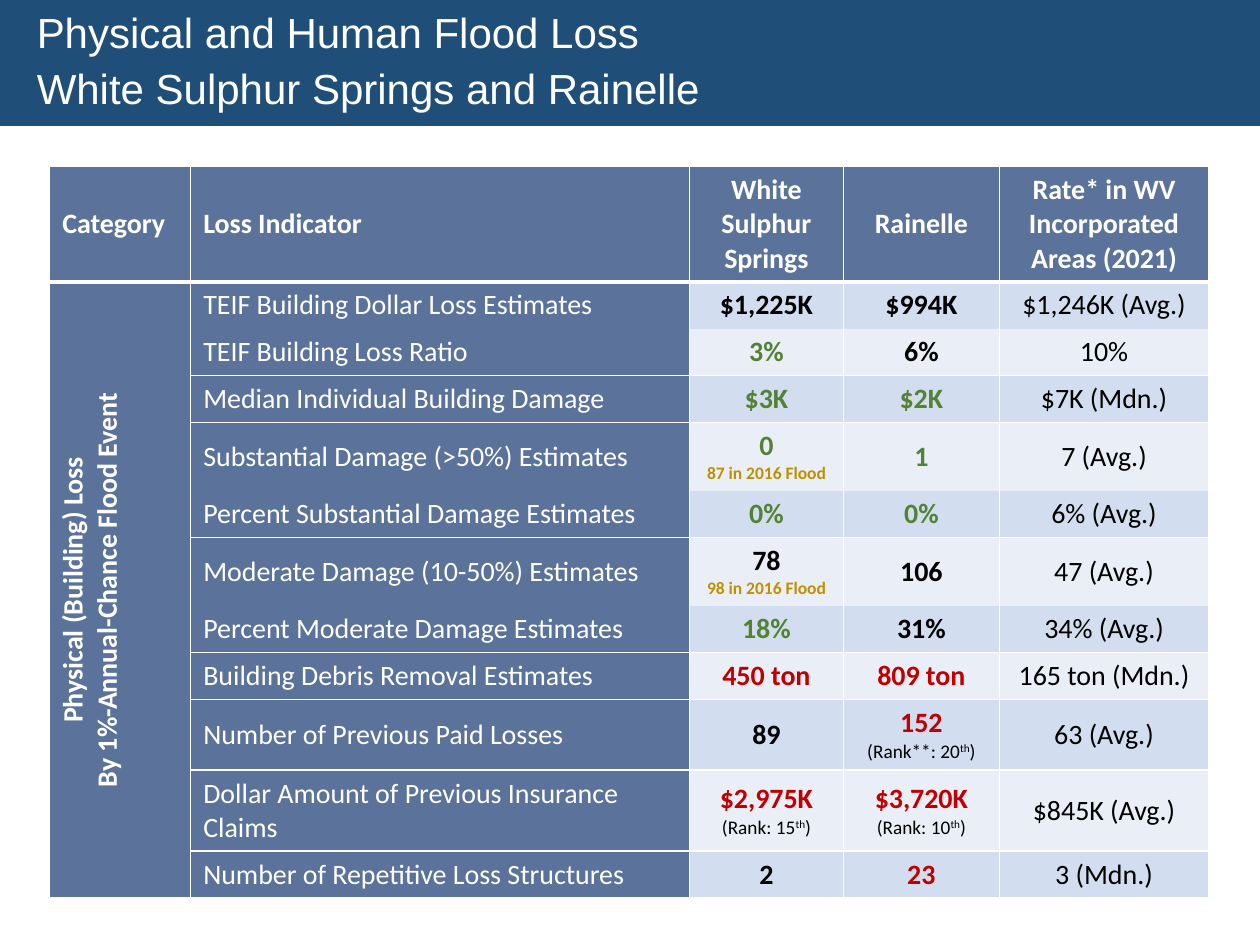
"""Build the flood loss comparison slide for White Sulphur Springs and Rainelle."""
from lxml.etree import SubElement
from pptx import Presentation
from pptx.dml.color import RGBColor
from pptx.enum.text import MSO_ANCHOR as Anchor, MSO_AUTO_SIZE as AutoSize, PP_ALIGN as Align
from pptx.oxml.ns import qn
from pptx.util import Pt

WHITE = RGBColor(0xFF, 0xFF, 0xFF)
BLACK = RGBColor(0x00, 0x00, 0x00)
NAVY = RGBColor(0x1F, 0x4E, 0x79)
SLATE = RGBColor(0x5B, 0x73, 0x9B)
BANDS = RGBColor(0xEA, 0xEF, 0xF7), RGBColor(0xD2, 0xDE, 0xEF)
GREEN = RGBColor(0x54, 0x82, 0x35)
GOLD = RGBColor(0xBF, 0x90, 0x00)
RED = RGBColor(0xC0, 0x00, 0x00)

HEADINGS = ["Category", "Loss Indicator", "White Sulphur Springs", "Rainelle",
            "Rate* in WV Incorporated Areas (2021)"]
CATEGORY = ["Physical (Building) Loss", "By 1%-Annual-Chance Flood Event"]
LOSSES = [
    ("TEIF Building Dollar Loss Estimates", ("$1,225K", BLACK), ("$994K", BLACK), "$1,246K (Avg.)"),
    ("TEIF Building Loss Ratio", ("3%", GREEN), ("6%", BLACK), "10%"),
    ("Median Individual Building Damage", ("$3K", GREEN), ("$2K", GREEN), "$7K (Mdn.)"),
    ("Substantial Damage (>50%) Estimates", ("0", GREEN, "87 in 2016 Flood"), ("1", GREEN), "7 (Avg.)"),
    ("Percent Substantial Damage Estimates", ("0%", GREEN), ("0%", GREEN), "6% (Avg.)"),
    ("Moderate Damage (10-50%) Estimates", ("78", BLACK, "98 in 2016 Flood"), ("106", BLACK), "47 (Avg.)"),
    ("Percent Moderate Damage Estimates", ("18%", GREEN), ("31%", BLACK), "34% (Avg.)"),
    ("Building Debris Removal Estimates", ("450 ton", RED), ("809 ton", RED), "165 ton (Mdn.)"),
    ("Number of Previous Paid Losses", ("89", BLACK), ("152", RED, "(Rank**: 20", "th", ")"), "63 (Avg.)"),
    ("Dollar Amount of Previous Insurance Claims", ("$2,975K", RED, "(Rank: 15", "th", ")"),
     ("$3,720K", RED, "(Rank: 10", "th", ")"), "$845K (Avg.)"),
    ("Number of Repetitive Loss Structures", ("2", BLACK), ("23", RED), "3 (Mdn.)"),
]
COLUMN_WIDTHS = [80.6, 285.1, 87.8, 89.3, 119.5]
LINE_HEIGHTS = {"single": 26.7, "flood": 38.9, "rank": 40.2, "double": 46.2}
ROW_KINDS = {4: "flood", 6: "flood", 9: "rank", 10: "double"}
HEADER_HEIGHT = 65.8
PAIR_STARTS = {1, 4, 6}


class SlideBuilder:
    """Hold the style and the current slide, and draw each kind of element."""

    heading = {"name": "Calibri", "size": Pt(16), "bold": True}
    regular = {**heading, "bold": False}
    flood = {**heading, "size": Pt(10)}
    rank = {**regular, "size": Pt(11)}
    banner = {"name": "Arial", "size": Pt(24), "bold": False}

    def __init__(self, deck):
        self.page = deck.slides.add_slide(deck.slide_layouts[5])

    def span(self, para, text, style, color, raised=False):
        span = para.add_run()
        span.text = text
        for name, value in style.items():
            setattr(span.font, name, value)
        span.font.color.rgb = color
        if raised:
            span._r.get_or_add_rPr().set("baseline", "30000")

    def lines(self, frame, texts, style, color, align):
        for index, text in enumerate(texts):
            para = frame.add_paragraph() if index else frame.paragraphs[0]
            para.alignment = align
            self.span(para, text, style, color)

    def title(self, texts, left, top, width, height):
        box = self.page.shapes.title
        place = {"left": left, "top": top, "width": width, "height": height}
        for name, value in place.items():
            setattr(box, name, Pt(value))
        box.fill.solid()
        box.fill.fore_color.rgb = NAVY
        frame = box.text_frame
        layout = {"auto_size": AutoSize.NONE, "word_wrap": True,
                  "vertical_anchor": Anchor.MIDDLE, "margin_left": Pt(21)}
        for name, value in layout.items():
            setattr(frame, name, value)
        self.lines(frame, texts, self.banner, WHITE, Align.LEFT)
        for para in frame.paragraphs:
            para.line_spacing = 0.9
        frame.paragraphs[1].space_before = Pt(6)

    def table(self, left, top, widths, heights):
        frame = self.page.shapes.add_table(len(heights), len(widths), Pt(left), Pt(top),
                                           Pt(sum(widths)), Pt(sum(heights)))
        table = frame.table
        for column, width in zip(table.columns, widths):
            column.width = Pt(width)
        for row, height in zip(table.rows, heights):
            row.height = Pt(height)
        return table

    def cell(self, cell, fill, top=1, bottom=1):
        cell.vertical_anchor = Anchor.MIDDLE
        properties = cell._tc.get_or_add_tcPr()
        for side, weight in zip("LRTB", (1, 1, top, bottom)):
            line = SubElement(properties, qn(f"a:ln{side}"), w=str(Pt(weight)))
            if weight:
                color = SubElement(SubElement(line, qn("a:solidFill")), qn("a:srgbClr"))
                color.set("val", str(WHITE))
            else:
                SubElement(line, qn("a:noFill"))
        cell.fill.solid()
        cell.fill.fore_color.rgb = fill

    def value(self, cell, text, color, *note):
        frame = cell.text_frame
        self.lines(frame, [text], self.heading, color, Align.CENTER)
        if note:
            para = frame.add_paragraph()
            para.alignment = Align.CENTER
            style, shade = (self.rank, BLACK) if len(note) > 1 else (self.flood, GOLD)
            for part in note:
                self.span(para, part, style, shade, raised=part == "th")


def fill_header(builder, table):
    for column, text in enumerate(HEADINGS):
        cell = table.cell(0, column)
        builder.cell(cell, SLATE, bottom=3)
        align = Align.LEFT if column < 2 else Align.CENTER
        builder.lines(cell.text_frame, [text], builder.heading, WHITE, align)


def fill_category(builder, table):
    cell = table.cell(1, 0)
    cell.merge(table.cell(len(LOSSES), 0))
    for row in range(1, len(LOSSES) + 1):
        builder.cell(table.cell(row, 0), SLATE, top=3 if row == 1 else 1)
    cell._tc.get_or_add_tcPr().set("vert", "vert270")
    builder.lines(cell.text_frame, CATEGORY, builder.heading, WHITE, Align.CENTER)


def fill_losses(builder, table):
    for row, (indicator, springs, rainelle, rate) in enumerate(LOSSES, 1):
        top = 3 if row == 1 else int(row - 1 not in PAIR_STARTS)
        bottom = int(row not in PAIR_STARTS)
        cells = [table.cell(row, column) for column in range(1, 5)]
        for cell, fill in zip(cells, [SLATE] + [BANDS[row % 2]] * 3):
            builder.cell(cell, fill, top, bottom)
        builder.lines(cells[0].text_frame, [indicator], builder.regular, WHITE, Align.LEFT)
        builder.value(cells[1], *springs)
        builder.value(cells[2], *rainelle)
        builder.lines(cells[3].text_frame, [rate], builder.regular, BLACK, Align.CENTER)


def main():
    deck = Presentation()
    deck.slide_width, deck.slide_height = Pt(720), Pt(540)
    builder = SlideBuilder(deck)
    builder.title(["Physical and Human Flood Loss", "White Sulphur Springs and Rainelle"], 0, 0, 720, 72)
    heights = [HEADER_HEIGHT] + [LINE_HEIGHTS[ROW_KINDS.get(row, "single")]
                                 for row in range(1, len(LOSSES) + 1)]
    table = builder.table(28.4, 95.2, COLUMN_WIDTHS, heights)
    fill_header(builder, table)
    fill_category(builder, table)
    fill_losses(builder, table)
    deck.save("out.pptx")


if __name__ == "__main__":
    main()
